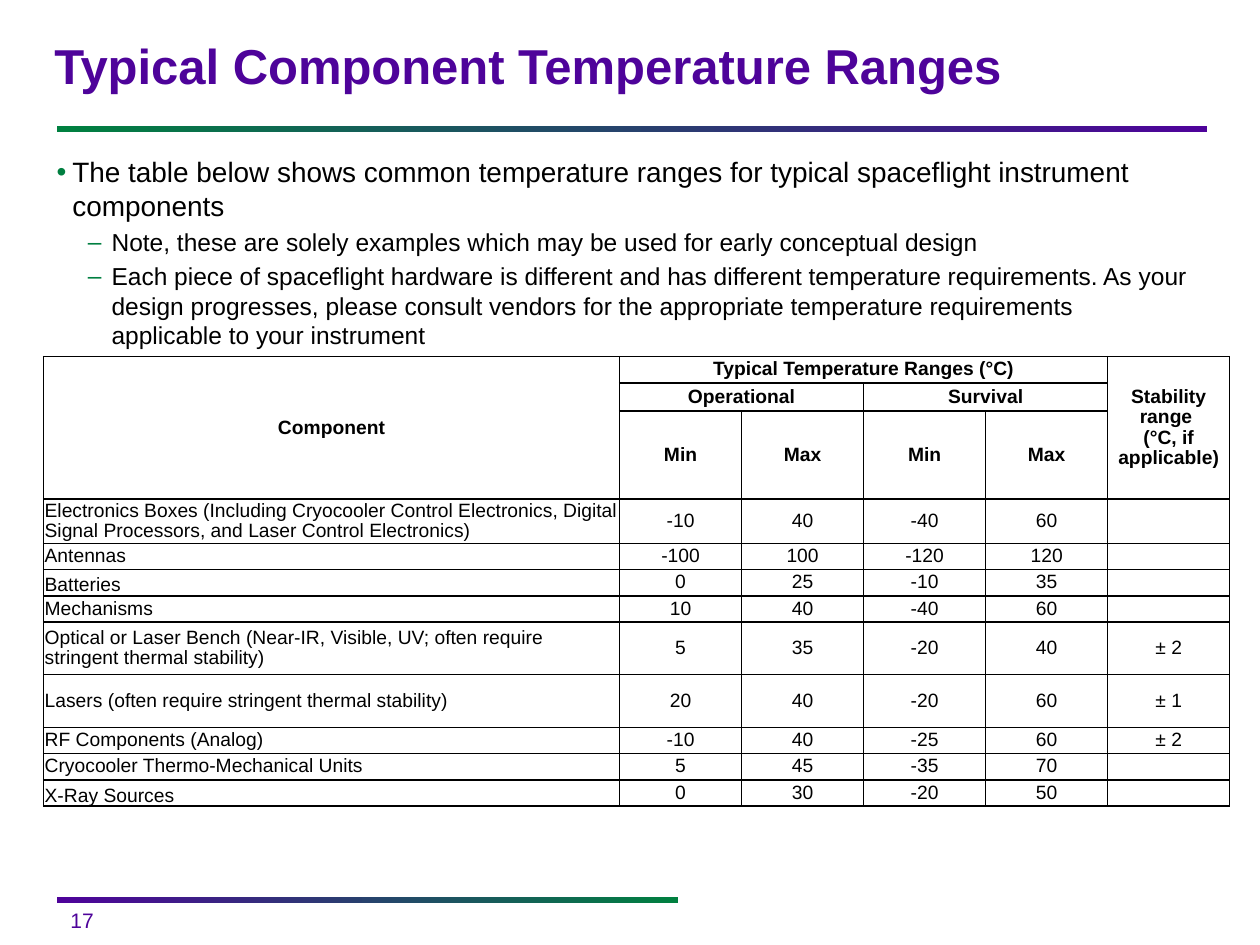
"""Build the slide on typical component temperature ranges."""
from lxml import etree
from pptx import Presentation
from pptx.dml.color import RGBColor
from pptx.enum.shapes import MSO_SHAPE
from pptx.enum.text import MSO_ANCHOR, MSO_AUTO_SIZE, PP_ALIGN
from pptx.oxml.ns import qn
from pptx.util import Cm, Pt

RECTANGLE = MSO_SHAPE.RECTANGLE
MIDDLE, BOTTOM, TOP = MSO_ANCHOR.MIDDLE, MSO_ANCHOR.BOTTOM, MSO_ANCHOR.TOP
LEFT, CENTER = PP_ALIGN.LEFT, PP_ALIGN.CENTER
NO_AUTOFIT = MSO_AUTO_SIZE.NONE

FONT = "Arial"
PURPLE = RGBColor(0x4E, 0x03, 0x9A)
GREEN = RGBColor(0x00, 0x80, 0x40)
BLACK = RGBColor(0x00, 0x00, 0x00)
BULLET_COLOR = RGBColor(0x00, 0x7F, 0x40)
TABLE_SIZE = 11
TABLE_LINE_SPACING = 0.95

TITLE = "Typical Component Temperature Ranges"
PAGE_NUMBER = "17"
BARS = [
    (2.54, 23.2, (GREEN, PURPLE)),
    (18.08, 12.52, (PURPLE, GREEN)),
]
BULLETS = [
    (0, "The table below shows common temperature ranges for typical spaceflight "
        "instrument components"),
    (1, "Note, these are solely examples which may be used for early conceptual design"),
    (1, "Each piece of spaceflight hardware is different and has different temperature "
        "requirements. As your design progresses, please consult vendors for the "
        "appropriate temperature requirements applicable to your instrument"),
]
LEVELS = [
    {"size": 16, "left": 0.32, "hanging": 0.32, "mark": "•"},
    {"size": 14, "left": 1.11, "hanging": 0.48, "mark": "–"},
]
HEADER = [
    ("Component", "Typical Temperature Ranges (°C)", "", "", "",
     "Stability range \n(°C, if applicable)"),
    ("", "Operational", "", "Survival", "", ""),
    ("", "Min", "Max", "Min", "Max", ""),
]
COMPONENTS = [
    ("Electronics Boxes (Including Cryocooler Control Electronics, Digital Signal "
     "Processors, and Laser Control Electronics)", "-10", "40", "-40", "60", ""),
    ("Antennas", "-100", "100", "-120", "120", ""),
    ("Batteries", "0", "25", "-10", "35", ""),
    ("Mechanisms", "10", "40", "-40", "60", ""),
    ("Optical or Laser Bench (Near-IR, Visible, UV; often require stringent thermal "
     "stability)", "5", "35", "-20", "40", "± 2"),
    ("Lasers (often require stringent thermal stability)", "20", "40", "-20", "60", "± 1"),
    ("RF Components (Analog)", "-10", "40", "-25", "60", "± 2"),
    ("Cryocooler Thermo-Mechanical Units", "5", "45", "-35", "70", ""),
    ("X-Ray Sources", "0", "30", "-20", "50", ""),
]
BOTTOM_ALIGNED = ("Batteries", "X-Ray Sources")
MERGES = [((0, 0), (2, 0)), ((0, 1), (0, 4)), ((0, 5), (2, 5)),
          ((1, 1), (1, 2)), ((1, 3), (1, 4))]
COLUMN_WIDTHS = [11.61] + [2.46] * 5
ROW_HEIGHT = 0.53
TALL_ROWS = {1: 0.57, 2: 1.76, 3: 0.89, 7: 1.06, 8: 1.06}


def add_run(paragraph, text, size, color=BLACK, bold=False):
    run = paragraph.add_run()
    run.text = text
    run.font.name = FONT
    run.font.size = Pt(size)
    run.font.bold = bold
    run.font.color.rgb = color


def add_bar(slide, top, width, colors):
    bar = slide.shapes.add_shape(RECTANGLE, Cm(1.14), Cm(top), Cm(width), Cm(0.12))
    bar.shadow.inherit = False
    bar.line.fill.background()
    bar.fill.gradient()
    bar.fill.gradient_angle = 0
    for stop, color in zip(bar.fill.gradient_stops, colors):
        stop.color.rgb = color


def add_title(slide):
    title = slide.shapes.title
    title.left, title.top, title.width, title.height = Cm(0.84), Cm(0.51), Cm(20.37), Cm(1.83)
    frame = title.text_frame
    frame.auto_size = NO_AUTOFIT
    frame.vertical_anchor = MIDDLE
    paragraph = frame.paragraphs[0]
    paragraph.alignment = LEFT
    paragraph.line_spacing = 0.8
    add_run(paragraph, TITLE, 28, PURPLE, True)


def add_bullets(slide):
    box = slide.shapes.add_textbox(Cm(0.89), Cm(3), Cm(23.34), Cm(14.33))
    frame = box.text_frame
    frame.word_wrap = True
    for index, (level, text) in enumerate(BULLETS):
        style = LEVELS[level]
        paragraph = frame.add_paragraph() if index else frame.paragraphs[0]
        paragraph.level = level
        paragraph.space_before = Pt(style["size"] * 0.2)
        properties = paragraph._p.get_or_add_pPr()
        properties.set("marL", str(Cm(style["left"])))
        properties.set("indent", str(-Cm(style["hanging"])))
        color = etree.SubElement(properties, qn("a:buClr"))
        etree.SubElement(color, qn("a:srgbClr"), val=str(BULLET_COLOR))
        etree.SubElement(properties, qn("a:buFont"), typeface=FONT)
        etree.SubElement(properties, qn("a:buChar"), char=style["mark"])
        add_run(paragraph, text, style["size"])


def add_borders(cell):
    properties = cell._tc.get_or_add_tcPr()
    for index, side in enumerate(("a:lnL", "a:lnR", "a:lnT", "a:lnB")):
        line = etree.Element(qn(side), w=str(Pt(1)))
        fill = etree.SubElement(line, qn("a:solidFill"))
        etree.SubElement(fill, qn("a:srgbClr"), val=str(BLACK))
        properties.insert(index, line)


def fill_cell(cell, text, alignment, anchor, bold):
    cell.fill.background()
    add_borders(cell)
    cell.margin_left = cell.margin_right = Cm(0.02)
    cell.margin_top = cell.margin_bottom = 0
    cell.vertical_anchor = anchor
    paragraph = cell.text_frame.paragraphs[0]
    paragraph.alignment = alignment
    paragraph.line_spacing = TABLE_LINE_SPACING
    if not text:
        etree.SubElement(paragraph._p, qn("a:endParaRPr"), sz=str(TABLE_SIZE * 100))
        return
    for index, line in enumerate(text.split("\n")):
        if index:
            paragraph.add_line_break()
        add_run(paragraph, line, TABLE_SIZE, bold=bold)


def add_temperature_table(slide):
    rows = HEADER + COMPONENTS
    heights = [TALL_ROWS.get(index, ROW_HEIGHT) for index in range(len(rows))]
    table = slide.shapes.add_table(
        len(rows), len(COLUMN_WIDTHS), Cm(0.88), Cm(7.19),
        Cm(sum(COLUMN_WIDTHS)), Cm(sum(heights))).table
    table.first_row = table.horz_banding = False
    for column, width in zip(table.columns, COLUMN_WIDTHS):
        column.width = Cm(width)
    for row, height in zip(table.rows, heights):
        row.height = Cm(height)
    for row_index, row in enumerate(rows):
        is_header = row_index < len(HEADER)
        for column_index, text in enumerate(row):
            alignment = CENTER if is_header or column_index else LEFT
            anchor = BOTTOM if text in BOTTOM_ALIGNED else MIDDLE
            fill_cell(table.cell(row_index, column_index), text, alignment, anchor, is_header)
    for first, last in MERGES:
        table.cell(*first).merge(table.cell(*last))


def add_page_number(slide):
    box = slide.shapes.add_textbox(Cm(1.17), Cm(18.17), Cm(1.02), Cm(0.76))
    box.text_frame.word_wrap = False
    box.text_frame.vertical_anchor = TOP
    add_run(box.text_frame.paragraphs[0], PAGE_NUMBER, 12, PURPLE)


def main():
    presentation = Presentation()
    presentation.slide_width, presentation.slide_height = Cm(25.4), Cm(19.05)
    slide = presentation.slides.add_slide(presentation.slide_layouts[5])
    for top, width, colors in BARS:
        add_bar(slide, top, width, colors)
    add_page_number(slide)
    add_title(slide)
    add_bullets(slide)
    add_temperature_table(slide)
    presentation.save("out.pptx")


if __name__ == "__main__":
    main()
